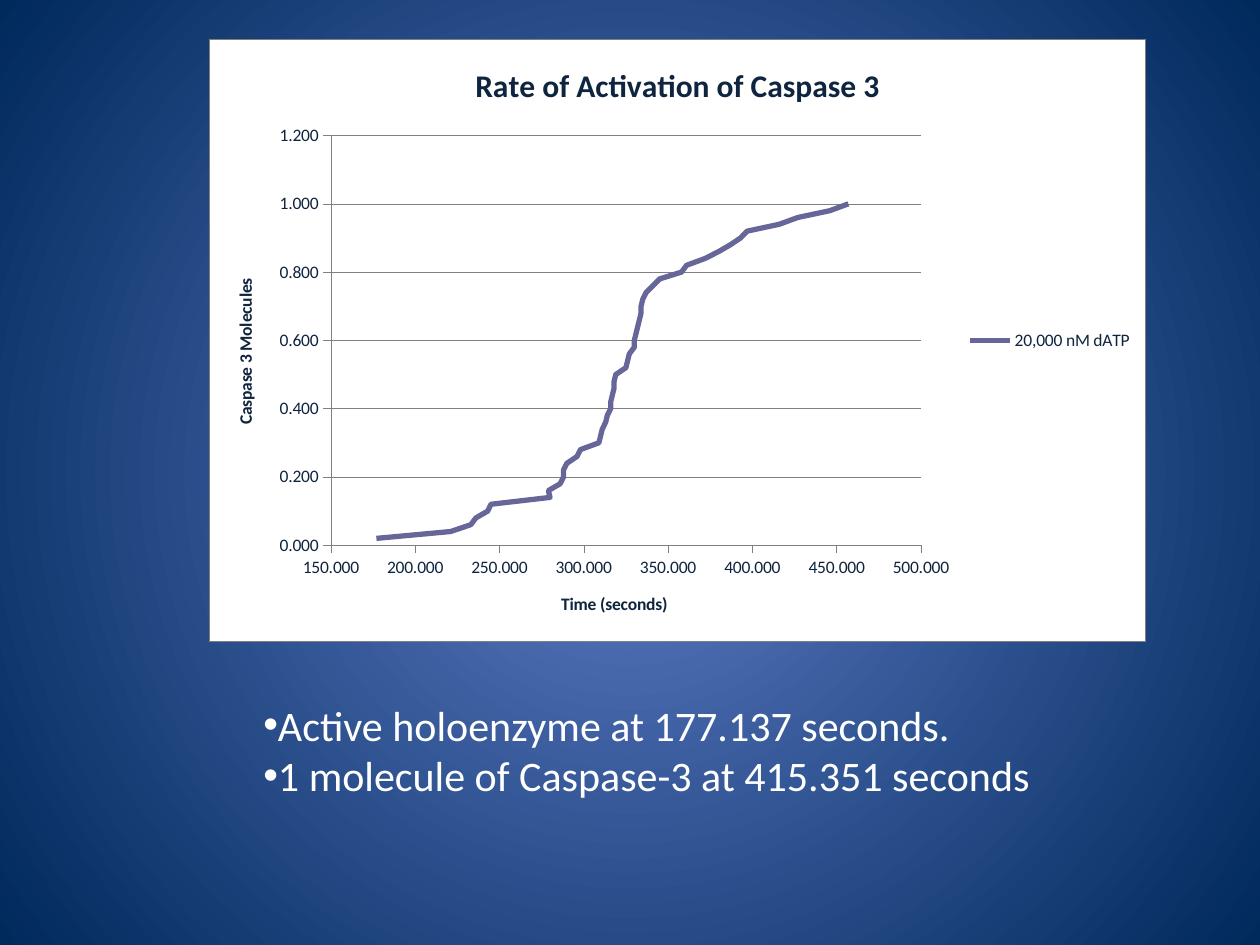
from lxml import etree
from pptx import Presentation
from pptx import util as u
from pptx.chart.data import XyChartData
from pptx.dml.color import RGBColor
from pptx.enum import chart as ch
from pptx.enum import text
from pptx.oxml import parse_xml
from pptx.oxml.ns import nsdecls, qn

PX = 914400 // 126
COLORS = {"center": "5E7CC5", "edge": "00295C", "ink": "0F243E",
          "rule": "808080", "curve": "666699", "white": "FFFFFF"}


def color(name):
    return RGBColor.from_string(COLORS[name])


def style_font(font, size, name, bold=False):
    font.name = "Calibri"
    font.size = u.Pt(size)
    font.bold = bold
    font.color.rgb = color(name)


deck = Presentation()
deck.slide_width, deck.slide_height = 1260 * PX, 945 * PX
page = deck.slides.add_slide(deck.slide_layouts[6])

# Background: radial gradient from the center
fill = page.background.fill
fill.gradient()
for stop, name, position in zip(fill.gradient_stops, ("center", "edge"), (0, 1)):
    stop.color.rgb = color(name)
    stop.position = position
gradient = page.background._cSld.find(".//" + qn("a:gradFill"))
gradient.replace(gradient.find(qn("a:lin")), parse_xml(
    f'<a:path {nsdecls("a")} path="circle">'
    '<a:fillToRect l="50000" t="50000" r="50000" b="50000"/></a:path>'))

# Chart data: one molecule fraction every 0.02, at these seconds
seconds = [177, 221, 233, 236, 243, 245, 280, 279, 286, 288,
           288, 290, 296, 298, 309, 310, 311, 313, 314, 316,
           316, 317, 318, 318, 319, 325, 326, 327, 330, 330,
           331, 332, 333, 334, 334, 335, 337, 341, 345, 358,
           361, 372, 380, 387, 393, 397, 416, 427, 446, 457]
data = XyChartData(number_format="0.000")
points = data.add_series("20,000 nM dATP")
for step, second in enumerate(seconds, start=1):
    points.add_data_point(second, round(step * 0.02, 2))

# Chart
chart = page.shapes.add_chart(ch.XL_CHART_TYPE.XY_SCATTER_SMOOTH_NO_MARKERS,
                              209 * PX, 39 * PX, 937 * PX, 603 * PX, data).chart
style_font(chart.font, 10, "ink")
chart.has_title = True
chart.chart_title.text_frame.text = "Rate of Activation of Caspase 3"
style_font(chart.chart_title.text_frame.paragraphs[0].runs[0].font, 18, "ink", True)
chart.has_legend = True
chart.legend.position = ch.XL_LEGEND_POSITION.RIGHT
chart.legend.include_in_layout = False

curve = chart.plots[0].series[0]
chart.plots[0].vary_by_categories = False
curve.smooth = True
curve.marker.style = ch.XL_MARKER_STYLE.NONE
curve.format.line.color.rgb = color("curve")
curve.format.line.width = u.Pt(3)

# Axes
for axis, title, low, high, unit in (
        (chart.category_axis, "Time (seconds)", 150, 500, 50),
        (chart.value_axis, "Caspase 3 Molecules", 0, 1.2, 0.2)):
    axis.minimum_scale, axis.maximum_scale, axis.major_unit = low, high, unit
    axis.has_title = True
    axis.axis_title.text_frame.text = title
    style_font(axis.axis_title.text_frame.paragraphs[0].runs[0].font, 10, "ink", True)
    axis.tick_labels.number_format = "0.000"
    axis.tick_labels.number_format_is_linked = False
    axis.major_tick_mark = ch.XL_TICK_MARK.OUTSIDE
    axis.format.line.color.rgb = color("rule")
    axis.format.line.width = u.Pt(0.25)
chart.category_axis.has_major_gridlines = False
chart.value_axis.has_major_gridlines = True
grid = chart.value_axis.major_gridlines.format.line
grid.color.rgb = color("rule")
grid.width = u.Pt(0.25)

# Plot area place, as shares of the chart
plot_area = chart._chartSpace.find(".//" + qn("c:plotArea"))
for old in plot_area.findall(qn("c:layout")):
    plot_area.remove(old)
layout = parse_xml(f'<c:layout {nsdecls("c")}><c:manualLayout/></c:layout>')
for tag, value in (("layoutTarget", "inner"), ("xMode", "edge"), ("yMode", "edge"),
                   ("x", "0.13"), ("y", "0.16"), ("w", "0.63"), ("h", "0.68")):
    etree.SubElement(layout[0], qn("c:" + tag)).set("val", value)
plot_area.insert(0, layout)

# White plot and chart area, thin border around the chart
white = f'<a:solidFill><a:srgbClr val="{COLORS["white"]}"/></a:solidFill>'
border = (f'<a:ln w="3175"><a:solidFill><a:srgbClr val="{COLORS["rule"]}"/>'
          '</a:solidFill></a:ln>')
plot_area.append(parse_xml(f'<c:spPr {nsdecls("c", "a")}>{white}</c:spPr>'))
chart._chartSpace.find(qn("c:chart")).addnext(
    parse_xml(f'<c:spPr {nsdecls("c", "a")}>{white}{border}</c:spPr>'))

# Findings
box = page.shapes.add_textbox(251 * PX, 693 * PX, 798 * PX, 165 * PX)
frame = box.text_frame
frame.word_wrap = False
frame.auto_size = text.MSO_AUTO_SIZE.SHAPE_TO_FIT_TEXT
frame.text = ("Active holoenzyme at 177.137 seconds.\n"
              "1 molecule of Caspase-3 at 415.351 seconds")
for para in frame.paragraphs:
    style_font(para.runs[0].font, 24, "white")
    bullets = para._p.get_or_add_pPr()
    etree.SubElement(bullets, qn("a:buFont")).set("typeface", "Arial")
    etree.SubElement(bullets, qn("a:buChar")).set("char", "•")

deck.save("out.pptx")
